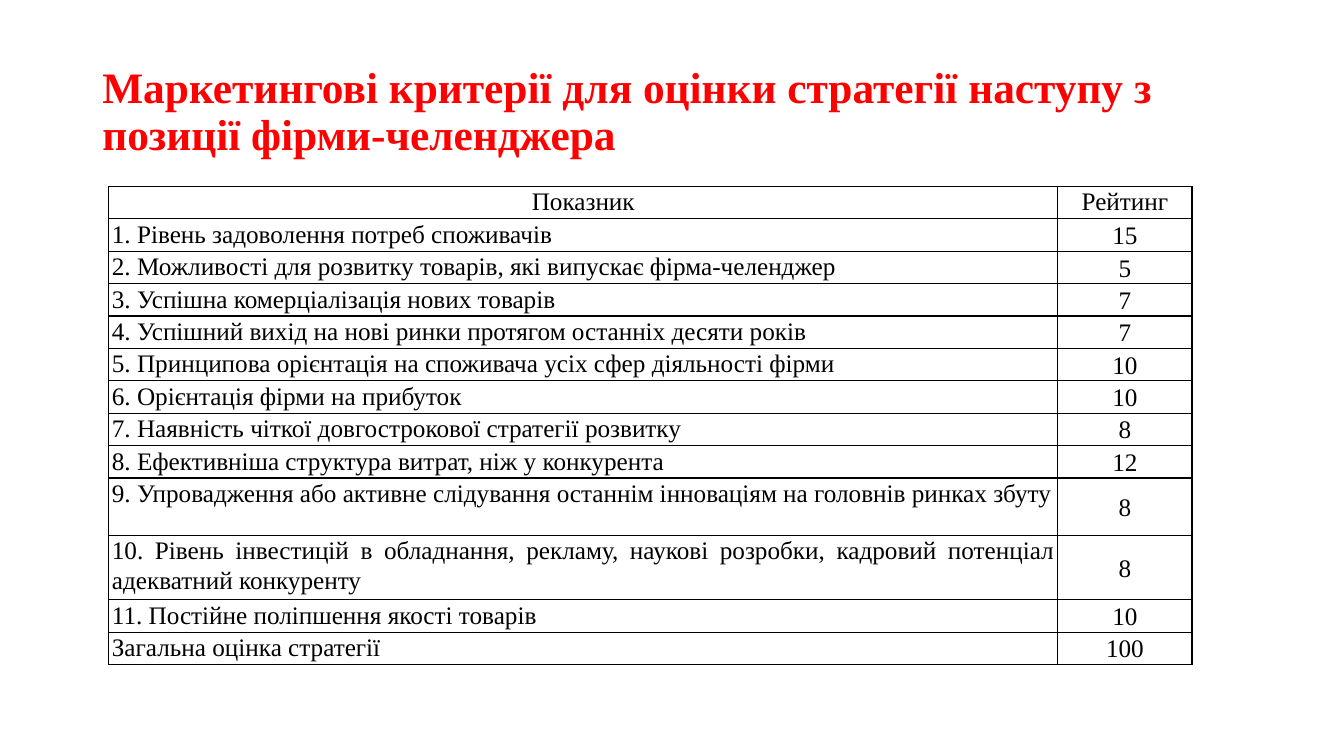
from lxml.etree import SubElement
from pptx import Presentation
from pptx.dml.color import RGBColor
from pptx.enum.text import MSO_ANCHOR as Anchor, PP_ALIGN as Align
from pptx.oxml.ns import qn
from pptx.util import Cm, Pt

FONT = "Times New Roman"
BLACK = "000000"
RED = "FF0000"
TITLE = "Маркетингові критерії для оцінки стратегії наступу з позиції фірми-челенджера"
HEADINGS = ("Показник", "Рейтинг")
CRITERIA = [
    ("Рівень задоволення потреб споживачів", 15),
    ("Можливості для розвитку товарів, які випускає фірма-челенджер", 5),
    ("Успішна комерціалізація нових товарів", 7),
    ("Успішний вихід на нові ринки протягом останніх десяти років", 7),
    ("Принципова орієнтація на споживача усіх сфер діяльності фірми", 10),
    ("Орієнтація фірми на прибуток", 10),
    ("Наявність чіткої довгострокової стратегії розвитку", 8),
    ("Ефективніша структура витрат, ніж у конкурента", 12),
    ("Упровадження або активне слідування останнім інноваціям на головнів ринках збуту", 8),
    ("Рівень інвестицій в обладнання, рекламу, наукові розробки, кадровий потенціал "
     "адекватний конкуренту", 8),
    ("Постійне поліпшення якості товарів", 10),
]
TOTAL_LABEL = "Загальна оцінка стратегії"
TALL_ROWS = (9, 10)
ROW_HEIGHT = 0.72
RATING_WIDTH = 3.38


def rgb(hex_color):
    return RGBColor.from_string(hex_color)


def style_paragraph(paragraph, size, color, bold, align, spacing):
    paragraph.alignment = align
    paragraph.line_spacing = spacing
    font = paragraph.font
    font.name, font.size, font.bold = FONT, Pt(size), bold
    font.color.rgb = rgb(color)


def add_title(slide, left, top, width, height):
    title = slide.shapes.add_textbox(Cm(left), Cm(top), Cm(width), Cm(height)).text_frame
    title.word_wrap = True
    title.vertical_anchor = Anchor.MIDDLE
    title.text = TITLE
    style_paragraph(title.paragraphs[0], 31, RED, True, Align.LEFT, 0.9)


def add_borders(cell, color):
    properties = cell._tc.get_or_add_tcPr()
    for side in ("a:lnL", "a:lnR", "a:lnT", "a:lnB"):
        line = SubElement(properties, qn(side), w=str(Pt(1)))
        SubElement(SubElement(line, qn("a:solidFill")), qn("a:srgbClr"), val=color)


def fill_cell(cell, text, align, anchor):
    cell.margin_left = cell.margin_right = Cm(0.08)
    cell.margin_top = cell.margin_bottom = 0
    cell.vertical_anchor = anchor
    cell.text = text
    style_paragraph(cell.text_frame.paragraphs[0], 18, BLACK, False, align, 1.07)
    add_borders(cell, BLACK)
    cell.fill.background()


def add_ratings(slide, left, top, width):
    numbered = [(f"{number}. {name}", str(rating))
                for number, (name, rating) in enumerate(CRITERIA, 1)]
    total = sum(rating for _, rating in CRITERIA)
    entries = [HEADINGS, *numbered, (TOTAL_LABEL, str(total))]
    height = ROW_HEIGHT * (len(entries) + len(TALL_ROWS))
    ratings = slide.shapes.add_table(
        len(entries), 2, Cm(left), Cm(top), Cm(width), Cm(height)).table
    ratings.first_row = ratings.horz_banding = False
    ratings.columns[0].width = Cm(width - RATING_WIDTH)
    ratings.columns[1].width = Cm(RATING_WIDTH)
    for index, (name, rating) in enumerate(entries):
        heading = index == 0
        ratings.rows[index].height = Cm(ROW_HEIGHT * (2 if index in TALL_ROWS else 1))
        fill_cell(ratings.cell(index, 0), name,
                  Align.CENTER if heading else Align.JUSTIFY, Anchor.TOP)
        fill_cell(ratings.cell(index, 1), rating, Align.CENTER,
                  Anchor.TOP if heading else Anchor.MIDDLE)


def main():
    deck = Presentation()
    deck.slide_width, deck.slide_height = Cm(33.87), Cm(19.05)
    slide = deck.slides.add_slide(deck.slide_layouts[6])
    add_title(slide, 2.33, 1.01, 29.21, 3.68)
    add_ratings(slide, 2.74, 4.7, 27.3)
    deck.save("out.pptx")


if __name__ == "__main__":
    main()
